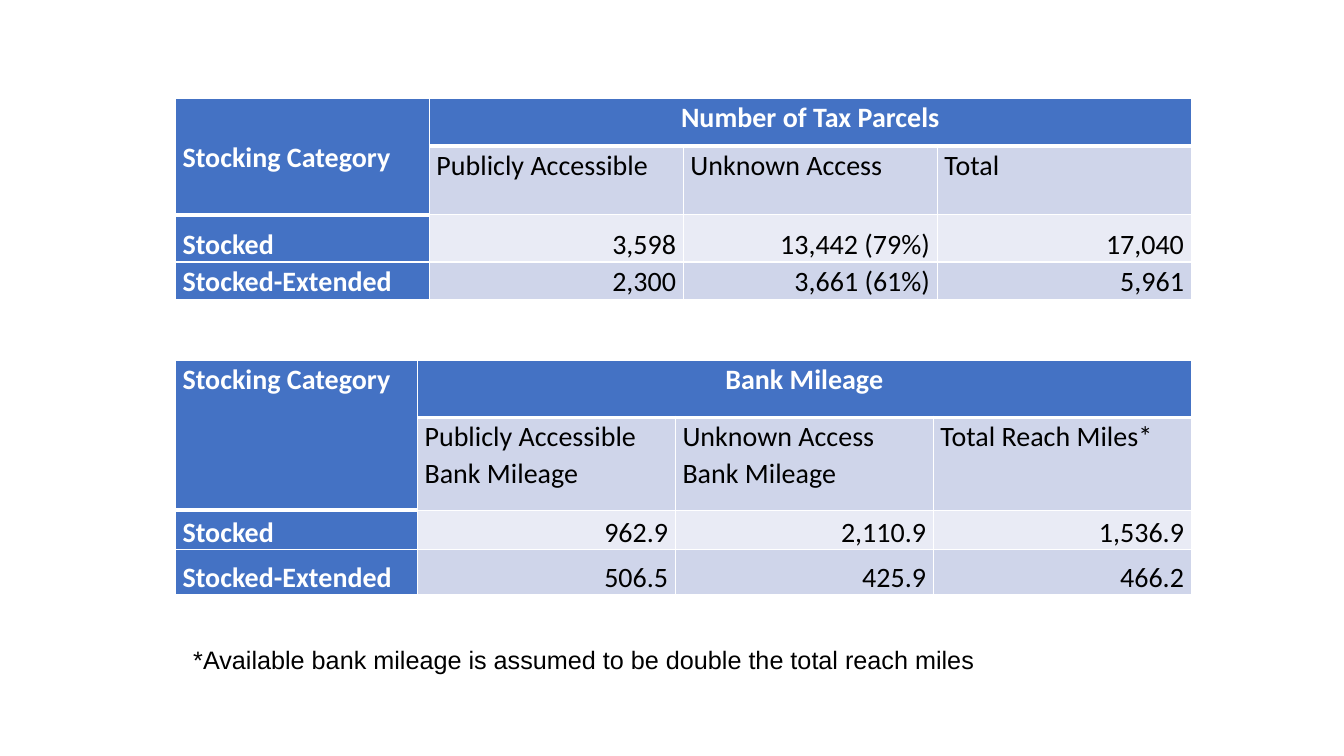
from lxml import etree
from pptx import Presentation
from pptx.dml.color import RGBColor
from pptx.enum.text import MSO_ANCHOR, PP_ALIGN
from pptx.util import Cm, Pt

WHITE = RGBColor(0xFF, 0xFF, 0xFF)
BLACK = RGBColor(0, 0, 0)
BLUE = RGBColor(0x44, 0x72, 0xC4)
BAND = RGBColor(0xCF, 0xD5, 0xEA)
PALE = RGBColor(0xE9, 0xEB, 0xF5)
LEFT, CENTER, RIGHT = PP_ALIGN.LEFT, PP_ALIGN.CENTER, PP_ALIGN.RIGHT
TOP, MIDDLE, BOTTOM = MSO_ANCHOR.TOP, MSO_ANCHOR.MIDDLE, MSO_ANCHOR.BOTTOM
NS = "http://schemas.openxmlformats.org/drawingml/2006/main"
THIN, THICK = 1, 3

PARCELS = [
    ["Stocking Category", "Number of Tax Parcels", "", ""],
    ["", "Publicly Accessible", "Unknown Access", "Total"],
    ["Stocked", "3,598", "13,442 (79%)", "17,040"],
    ["Stocked-Extended", "2,300", "3,661 (61%)", "5,961"],
]
MILEAGE = [
    ["Stocking Category", "Bank Mileage", "", ""],
    ["", "Publicly Accessible Bank Mileage", "Unknown Access Bank Mileage",
     "Total Reach Miles*"],
    ["Stocked", "962.9", "2,110.9", "1,536.9"],
    ["Stocked-Extended", "506.5", "425.9", "466.2"],
]


class Page:
    def __init__(self, slide):
        self.slide = slide
        self.face = "Calibri"
        self.size = 20

    def label(self, frame, text, align=LEFT, color=BLACK, bold=False,
              size=None, face=None):
        para = frame.paragraphs[0]
        para.alignment = align
        para.line_spacing = 1.07
        run = para.add_run()
        run.text = text
        font = run.font
        font.name = face or self.face
        font.size = Pt(size or self.size)
        font.bold = bold
        font.color.rgb = color

    def edge(self, cell, above, below):
        """Draw white borders, with the top and bottom widths given."""
        props = cell._tc.get_or_add_tcPr()
        sides = zip(("lnL", "lnR", "lnT", "lnB"), (THIN, THIN, above, below))
        for spot, (side, width) in enumerate(sides):
            line = etree.Element(f"{{{NS}}}{side}", w=str(Pt(width)))
            fill = etree.SubElement(line, f"{{{NS}}}solidFill")
            etree.SubElement(fill, f"{{{NS}}}srgbClr", val=str(WHITE))
            props.insert(spot, line)

    def table(self, top, cols, rows, data, anchor):
        frame = self.slide.shapes.add_table(
            len(rows), len(cols), Cm(4.42), Cm(top), Cm(sum(cols)), Cm(sum(rows)))
        grid = frame.table
        for col, width in zip(grid.columns, cols):
            col.width = Cm(width)
        for row, height in zip(grid.rows, rows):
            row.height = Cm(height)
        grid.cell(0, 0).merge(grid.cell(1, 0))
        grid.cell(0, 1).merge(grid.cell(0, 3))
        for r, line in enumerate(data):
            for c, text in enumerate(line):
                self.cell(grid.cell(r, c), r, c, text, anchor)

    def cell(self, cell, r, c, text, anchor):
        head = r == 0 or c == 0
        cell.margin_left = cell.margin_right = Cm(0.18)
        cell.margin_top = cell.margin_bottom = 0
        cell.vertical_anchor = BOTTOM if r > 1 else anchor if c == 0 else TOP
        cell.fill.solid()
        cell.fill.fore_color.rgb = BLUE if head else PALE if r == 2 else BAND
        last = 1 if c == 0 else 0
        self.edge(cell, THICK if r == last + 1 else THIN,
                  THICK if r <= last else THIN)
        if text:
            align = LEFT if c == 0 or r == 1 else CENTER if r == 0 else RIGHT
            self.label(cell.text_frame, text, align,
                       WHITE if head else BLACK, head)

    def note(self, left, top, width, height, text):
        box = self.slide.shapes.add_textbox(
            Cm(left), Cm(top), Cm(width), Cm(height))
        box.text_frame.word_wrap = True
        self.label(box.text_frame, text, size=18, face="Arial")


def main():
    deck = Presentation()
    deck.slide_width, deck.slide_height = Cm(33.87), Cm(19.05)
    page = Page(deck.slides.add_slide(deck.slide_layouts[6]))
    page.table(2.49, [6.4] * 4, [1.19, 1.73, 1.19, 0.94], PARCELS, MIDDLE)
    page.table(9.07, [6.1] + [6.5] * 3, [1.45, 2.34, 0.99, 1.14], MILEAGE, TOP)
    page.note(4.62, 16.05, 25.2, 1.02,
              "*Available bank mileage is assumed to be double the total reach miles")
    deck.save("out.pptx")


if __name__ == "__main__":
    main()
